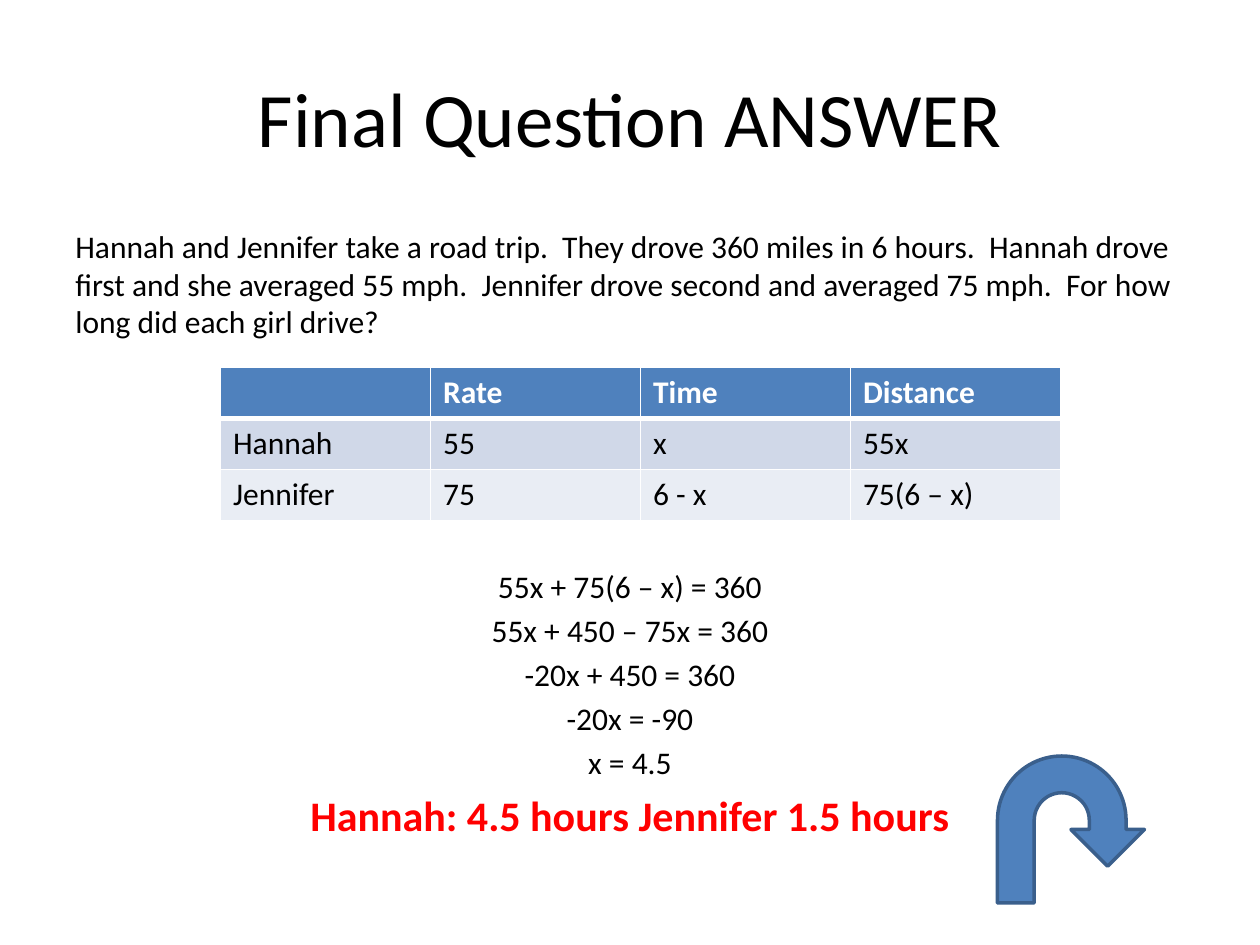
"""Build the final-round answer slide: word problem, rate table and solution."""
from dataclasses import dataclass

from pptx import Presentation
from pptx.dml.color import RGBColor
from pptx.enum.shapes import MSO_SHAPE as Shape
from pptx.enum.text import MSO_ANCHOR as Anchor, PP_ALIGN as Align
from pptx.oxml.ns import qn
from pptx.util import Pt
from lxml.etree import SubElement

BLACK = RGBColor(0x00, 0x00, 0x00)
WHITE = RGBColor(0xFF, 0xFF, 0xFF)
RED = RGBColor(0xFF, 0x00, 0x00)
BLUE = RGBColor(0x4F, 0x81, 0xBD)
DARK_BLUE = RGBColor(0x3A, 0x5F, 0x8C)
BAND_DARK = RGBColor(0xD0, 0xD8, 0xE8)
BAND_LIGHT = RGBColor(0xE9, 0xED, 0xF4)
FONT = "Calibri"


@dataclass
class Line:
    text: str
    size: float = 18
    align: Align = Align.CENTER
    before: float = 3.6
    color: RGBColor = BLACK
    bold: bool = False


@dataclass
class Row:
    texts: tuple[str, ...]
    fill: RGBColor
    color: RGBColor = BLACK
    bold: bool = False
    rule: float = 1


TITLE = [Line("Final Question ANSWER", size=44, before=0)]
BODY = [
    Line("Hannah and Jennifer take a road trip.  They drove 360 miles in 6 hours.  "
         "Hannah drove first and she averaged 55 mph.  Jennifer drove second and "
         "averaged 75 mph.  For how long did each girl drive?", align=Align.LEFT),
    Line("55x + 75(6 – x) = 360", before=129.5),
    Line("55x + 450 – 75x = 360"),
    Line("-20x + 450 = 360"),
    Line("-20x = -90"),
    Line("x = 4.5"),
    Line("Hannah: 4.5 hours Jennifer 1.5 hours", size=24, before=4.8, color=RED, bold=True),
]
ROWS = [
    Row(("", "Rate", "Time", "Distance"), BLUE, WHITE, bold=True, rule=3),
    Row(("Hannah", "55", "x", "55x"), BAND_DARK),
    Row(("Jennifer", "75", "6 - x", "75(6 – x)"), BAND_LIGHT),
]


def style_runs(p, size: float, color: RGBColor, bold: bool) -> None:
    for r in p.runs:
        r.font.name, r.font.size, r.font.bold = FONT, Pt(size), bold
        r.font.color.rgb = color


def add_text(s, box: tuple[float, ...], lines: list[Line], anchor: Anchor) -> None:
    tf = s.shapes.add_textbox(*map(Pt, box)).text_frame
    tf.word_wrap, tf.vertical_anchor = True, anchor
    tf.text = "\n".join(line.text for line in lines)
    for p, line in zip(tf.paragraphs, lines):
        p.alignment, p.space_before = line.align, Pt(line.before)
        style_runs(p, line.size, line.color, line.bold)


def add_borders(cell, top: float, bottom: float) -> None:
    tc_pr = cell._tc.get_or_add_tcPr()
    for side, width in (("L", 1), ("R", 1), ("T", top), ("B", bottom)):
        ln = SubElement(tc_pr, qn(f"a:ln{side}"), w=str(Pt(width)))
        SubElement(SubElement(ln, qn("a:solidFill")), qn("a:srgbClr"), val=str(WHITE))


def add_table(s, left: float, top: float, col_w: float, row_h: float, rows: list[Row]) -> None:
    n_cols = len(rows[0].texts)
    table = s.shapes.add_table(len(rows), n_cols, Pt(left), Pt(top),
                               Pt(col_w * n_cols), Pt(row_h * len(rows))).table
    rule_above = 1
    for i, row in enumerate(rows):
        for j, text in enumerate(row.texts):
            cell = table.cell(i, j)
            add_borders(cell, rule_above, row.rule)
            cell.fill.solid()
            cell.fill.fore_color.rgb = row.fill
            cell.text_frame.text = text
            p = cell.text_frame.paragraphs[0]
            p.font.size = Pt(18)
            style_runs(p, 18, row.color, row.bold)
        rule_above = row.rule


def add_return_arrow(s, left: float, top: float, size: float) -> None:
    sp = s.shapes.add_shape(Shape.U_TURN_ARROW, Pt(left), Pt(top), Pt(size), Pt(size))
    sp.shadow.inherit = False
    sp.fill.solid()
    sp.fill.fore_color.rgb = BLUE
    sp.line.color.rgb = DARK_BLUE
    sp.line.width = Pt(2)


def main() -> None:
    prs = Presentation()
    prs.slide_width, prs.slide_height = Pt(720), Pt(540)
    s = prs.slides.add_slide(prs.slide_layouts[6])
    add_text(s, (36, 21.6, 648, 90), TITLE, Anchor.MIDDLE)
    add_text(s, (36, 126, 648, 356.4), BODY, Anchor.TOP)
    add_table(s, 126, 210, 120, 29.2, ROWS)
    add_return_arrow(s, 570, 432, 84)
    prs.save("out.pptx")


if __name__ == "__main__":
    main()
